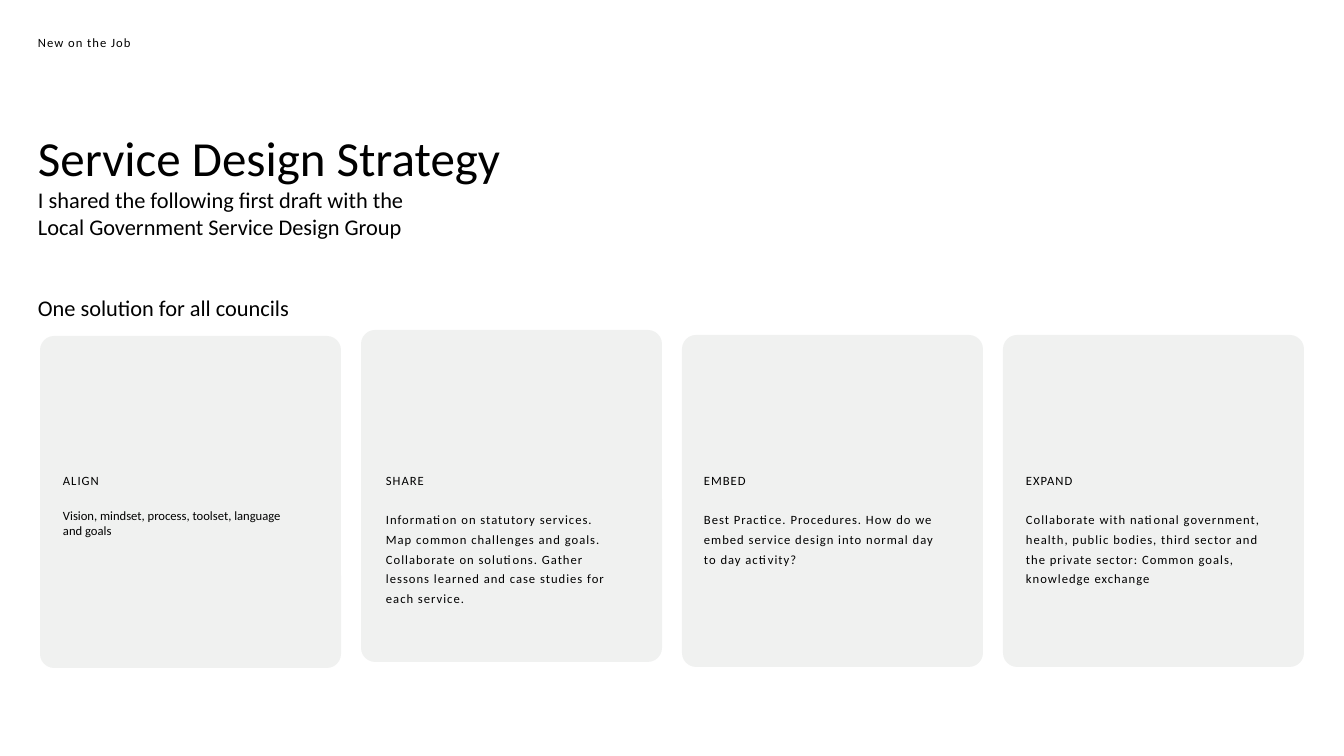
import pptx
import pptx.util
import pptx.dml.color
import pptx.enum.shapes
import pptx.enum.text

COLORS = {"card": "F0F1F0", "text": "000000", "page": "FFFFFF"}
FONT = "Calibri"
PX_PER_INCH = 100.8
PAGE_SIZE = (1344, 756)
INSET = 3

# Each line: text, then its format
HEADER = [("New on the Job", dict(size=9, tracking=0.7, spacing=0.8))]
TITLE = [
    ("Service Design Strategy", dict(size=35)),
    ("I shared the following first draft with the", dict(size=16)),
    ("Local Government Service Design Group", dict(size=16)),
    ("One solution for all councils", dict(size=16, before=39)),
]
SPACED = dict(tracking=0.7, spacing=1.3)
# Card top, text left, text height, heading, body, body format
CARDS = [
    (336, 60, 76, "ALIGN",
     "Vision, mindset, process, toolset, language and goals", {}),
    (330, 383, 143, "SHARE",
     "Information on statutory services. Map common challenges and goals. "
     "Collaborate on solutions. Gather lessons learned and case studies for each service.",
     SPACED),
    (335, 701, 103, "EMBED",
     "Best Practice. Procedures. How do we embed service design into normal day "
     "to day activity?", SPACED),
    (335, 1023, 123, "EXPAND",
     "Collaborate with national government, health, public bodies, third sector and "
     "the private sector: Common goals, knowledge exchange", SPACED),
]
CARD_LEFT, CARD_STEP = 40, 321
CARD_WIDTH, CARD_HEIGHT = 301, 332
TEXT_TOP, TEXT_WIDTH = 465, 242


def px(length):
    return pptx.util.Inches(length / PX_PER_INCH)


def color(name):
    return pptx.dml.color.RGBColor.from_string(COLORS[name])


def write(para, text, size=9, tracking=0, spacing=1.0, before=0):
    """Fill a paragraph; size, tracking and before are in points."""
    para.line_spacing = spacing
    para.space_before = pptx.util.Pt(before)
    span = para.add_run()
    span.text = text
    span.font.name = FONT
    span.font.size = pptx.util.Pt(size)
    span.font.color.rgb = color("text")
    if tracking:
        span.font._element.set("spc", str(round(tracking * 100)))


def add_text(page, left, top, width, height, lines):
    box = page.shapes.add_textbox(px(left), px(top), px(width), px(height))
    frame = box.text_frame
    frame.word_wrap = True
    frame.auto_size = pptx.enum.text.MSO_AUTO_SIZE.SHAPE_TO_FIT_TEXT
    frame.margin_left = frame.margin_right = px(INSET)
    frame.margin_top = frame.margin_bottom = px(INSET)
    for index, (text, style) in enumerate(lines):
        para = frame.add_paragraph() if index else frame.paragraphs[0]
        write(para, text, **style)


def add_card(page, left, top):
    card = page.shapes.add_shape(
        pptx.enum.shapes.MSO_SHAPE.ROUNDED_RECTANGLE,
        px(left), px(top), px(CARD_WIDTH), px(CARD_HEIGHT))
    card.adjustments[0] = 0.047
    card.shadow.inherit = False
    card.fill.solid()
    card.fill.fore_color.rgb = color("card")
    card.line.fill.background()


def main():
    deck = pptx.Presentation()
    deck.slide_width, deck.slide_height = map(px, PAGE_SIZE)
    page = deck.slides.add_slide(deck.slide_layouts[6])
    page.background.fill.solid()
    page.background.fill.fore_color.rgb = color("page")

    add_text(page, 35, 35, 626, 18, HEADER)
    add_text(page, 35, 124, 516, 201, TITLE)
    for index, (top, text_left, text_height, heading, body, style) in enumerate(CARDS):
        add_card(page, CARD_LEFT + index * CARD_STEP, top)
        lines = [(heading, SPACED), (body, dict(style, before=14.3))]
        add_text(page, text_left, TEXT_TOP, TEXT_WIDTH, text_height, lines)

    deck.save("out.pptx")


if __name__ == "__main__":
    main()
